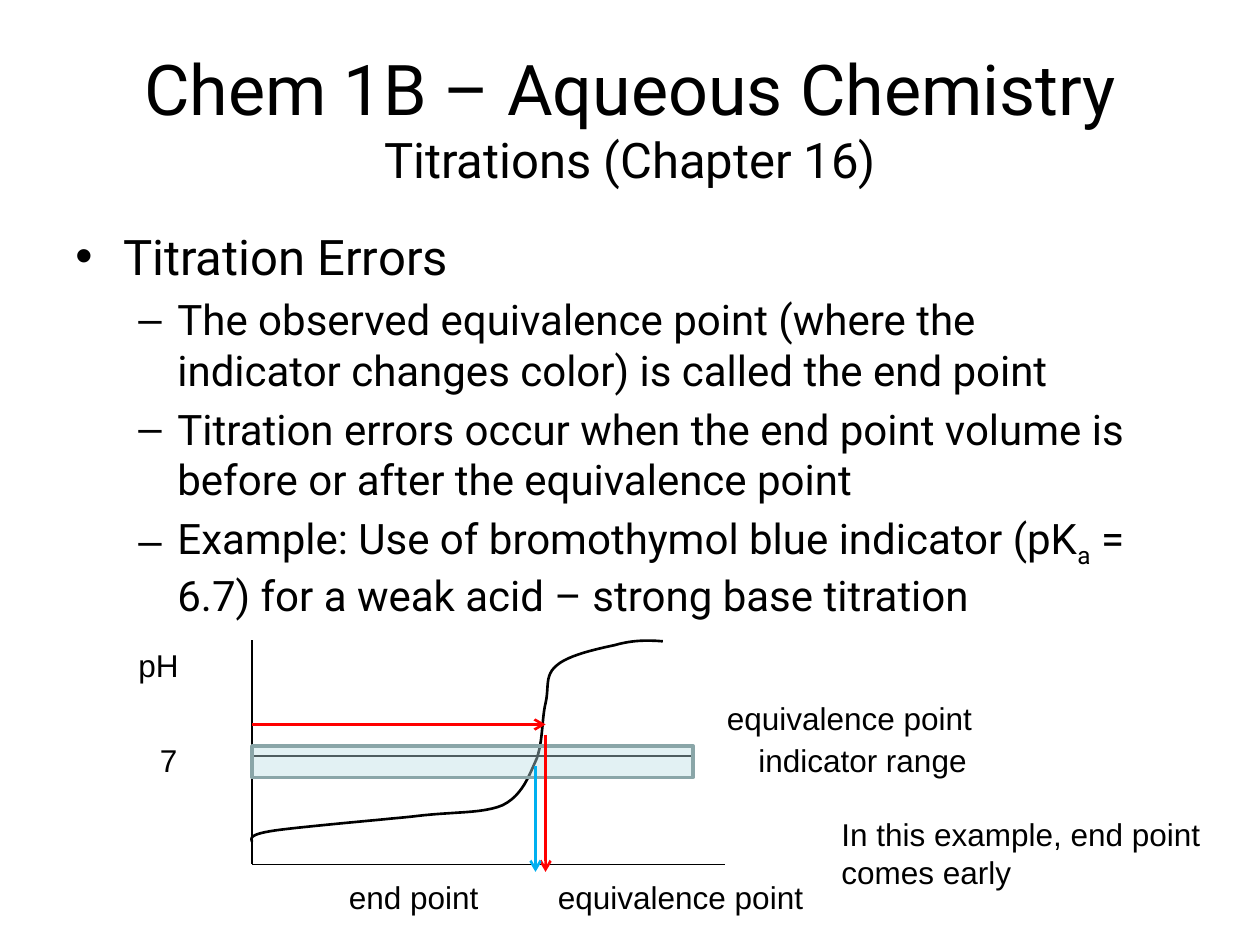
from lxml import etree
from pptx import Presentation
from pptx.dml.color import RGBColor
from pptx.enum.shapes import MSO_CONNECTOR, MSO_SHAPE
from pptx.enum.text import MSO_ANCHOR, PP_ALIGN
from pptx.oxml.ns import qn
from pptx.util import Inches, Pt

STRAIGHT = MSO_CONNECTOR.STRAIGHT
RECTANGLE = MSO_SHAPE.RECTANGLE
TOP, MIDDLE = MSO_ANCHOR.TOP, MSO_ANCHOR.MIDDLE
LEFT, CENTER = PP_ALIGN.LEFT, PP_ALIGN.CENTER

BLACK = RGBColor(0x00, 0x00, 0x00)
RED = RGBColor(0xFF, 0x00, 0x00)
BLUE = RGBColor(0x00, 0xB0, 0xF0)
BAND_FILL = RGBColor(0xBB, 0xE0, 0xE3)
BAND_LINE = RGBColor(0x8A, 0xA6, 0xA8)

# Titration curve as cubic Bezier segments, relative to the plot's top left
CURVE_START = (0, 1.6)
CURVE = [
    ((-0.01, 1.57), (-0.02, 1.54), (0.19, 1.51)),
    ((0.41, 1.48), (0.98, 1.43), (1.28, 1.4)),
    ((1.58, 1.36), (1.83, 1.38), (1.99, 1.31)),
    ((2.15, 1.23), (2.2, 1.07), (2.26, 0.94)),
    ((2.31, 0.8), (2.3, 0.62), (2.33, 0.5)),
    ((2.36, 0.37), (2.32, 0.28), (2.42, 0.2)),
    ((2.51, 0.12), (2.74, 0.07), (2.88, 0.04)),
    ((3.02, 0), (3.14, 0), (3.26, 0.01)),
]

# Labels: text, left, top, width, height relative to the plot's top left
LABELS = [
    ("pH", -1, 0, 0.58, 0.4),
    ("7", -0.83, 0.75, 0.58, 0.4),
    ("indicator range", 3.92, 0.75, 2.17, 0.4),
    ("equivalence point", 3.67, 0.42, 2.17, 0.4),
    ("end point", 0.67, 1.84, 1.42, 0.4),
    ("equivalence point", 2.33, 1.84, 2.5, 0.4),
    ("In this example, end point comes early", 4.58, 1.34, 3.25, 0.71),
]


def add_run(p, text, size=18, font="Arial", color=BLACK, baseline=0):
    r = p.add_run()
    r.text = text
    r.font.size = Pt(size)
    r.font.name = font
    r.font.color.rgb = color
    if baseline:
        r.font._element.set("baseline", str(baseline * 1000))


def add_text_frame(s, x, y, w, h, anchor=TOP):
    tf = s.shapes.add_textbox(Inches(x), Inches(y), Inches(w), Inches(h)).text_frame
    tf.word_wrap = True
    tf.vertical_anchor = anchor
    return tf


def set_bullet(p, char, margin, hanging):
    pPr = p._p.get_or_add_pPr()
    pPr.set("marL", str(Inches(margin)))
    pPr.set("indent", str(-Inches(hanging)))
    etree.SubElement(pPr, qn("a:buFont")).set("typeface", "Arial")
    etree.SubElement(pPr, qn("a:buChar")).set("char", char)


def add_line(s, x1, y1, x2, y2, color=BLACK, width=0.75, arrow=False):
    line = s.shapes.add_connector(
        STRAIGHT, Inches(x1), Inches(y1), Inches(x2), Inches(y2))
    line.line.color.rgb = color
    line.line.width = Pt(width)
    if arrow:
        etree.SubElement(line.line._get_or_add_ln(), qn("a:tailEnd")).set("type", "arrow")
    etree.SubElement(line._element.spPr, qn("a:effectLst"))


def curve_points(steps=12):
    """Sample the Bezier segments into points for the freeform."""
    points, start = [], CURVE_START
    for c1, c2, end in CURVE:
        for i in range(1, steps + 1):
            t = i / steps
            u = 1 - t
            points.append(tuple(
                u**3 * a + 3 * u * u * t * b + 3 * u * t * t * c + t**3 * d
                for a, b, c, d in zip(start, c1, c2, end)))
        start = end
    return points


def add_title(s, x, y, w, h):
    p = add_text_frame(s, x, y, w, h, MIDDLE).paragraphs[0]
    p.alignment = CENTER
    add_run(p, "Chem 1B – Aqueous Chemistry", size=40, font="Roboto")
    p.add_line_break()
    add_run(p, "Titrations (Chapter 16)", size=28, font="Roboto")


def add_body(s, x, y, w, h):
    tf = add_text_frame(s, x, y, w, h)
    # Each paragraph: level and its (text, baseline) runs
    paragraphs = [
        (0, [("Titration Errors", 0)]),
        (1, [("The observed equivalence point (where the indicator changes "
              "color) is called the end point", 0)]),
        (1, [("Titration errors occur when the end point volume is before "
              "or after the equivalence point", 0)]),
        (1, [("Example: Use of bromothymol blue indicator (pK", 0), ("a", -25),
             (" = 6.7) for a weak acid – strong base titration", 0)]),
    ]
    styles = [(28, "•", 0.38, 0.38), (24, "–", 0.81, 0.31)]
    for i, (level, runs) in enumerate(paragraphs):
        size, char, margin, hanging = styles[level]
        p = tf.add_paragraph() if i else tf.paragraphs[0]
        p.level = level
        p.alignment = LEFT
        p.space_before = Pt(size * 0.2)
        set_bullet(p, char, margin, hanging)
        for text, baseline in runs:
            add_run(p, text, size=size, font="Roboto", baseline=baseline)


def add_titration_plot(s, x, y, w, h):
    # Axes and the pH 7 level
    add_line(s, x, y, x, y + h)
    add_line(s, x, y + h, x + w, y + h)
    add_line(s, x, y + 0.92, x + 3.5, y + 0.92)

    # Titration curve
    builder = s.shapes.build_freeform(
        Inches(x + CURVE_START[0]), Inches(y + CURVE_START[1]))
    builder.add_line_segments(
        [(Inches(x + px), Inches(y + py)) for px, py in curve_points()], close=False)
    curve = builder.convert_to_shape()
    curve.shadow.inherit = False
    curve.fill.background()
    curve.line.color.rgb = BLACK
    curve.line.width = Pt(1.5)

    # Indicator range
    band = s.shapes.add_shape(
        RECTANGLE, Inches(x), Inches(y + 0.84), Inches(3.5), Inches(0.25))
    band.shadow.inherit = False
    band.fill.solid()
    band.fill.fore_color.rgb = BAND_FILL
    fill_color = band._element.spPr.find(qn("a:solidFill"))[0]
    etree.SubElement(fill_color, qn("a:alpha")).set("val", "42000")
    band.line.color.rgb = BAND_LINE
    band.line.width = Pt(2)

    # Equivalence point and end point arrows
    for x1, y1, x2, y2, color in [
        (0, 0.67, 2.33, 0.67, RED),
        (2.33, 0.75, 2.33, 1.84, RED),
        (2.25, 1, 2.25, 1.84, BLUE),
    ]:
        add_line(s, x + x1, y + y1, x + x2, y + y2, color, width=1.5, arrow=True)

    for text, dx, dy, lw, lh in LABELS:
        add_run(add_text_frame(s, x + dx, y + dy, lw, lh).paragraphs[0], text)


def main():
    prs = Presentation()
    prs.slide_width, prs.slide_height = Inches(10), Inches(7.5)
    s = prs.slides.add_slide(prs.slide_layouts[6])
    add_title(s, 0.5, 0.3, 9, 1.25)
    add_body(s, 0.5, 1.75, 8.67, 3.5)
    add_titration_plot(s, 2, 5.08, 3.75, 1.78)
    prs.save("out.pptx")


if __name__ == "__main__":
    main()
